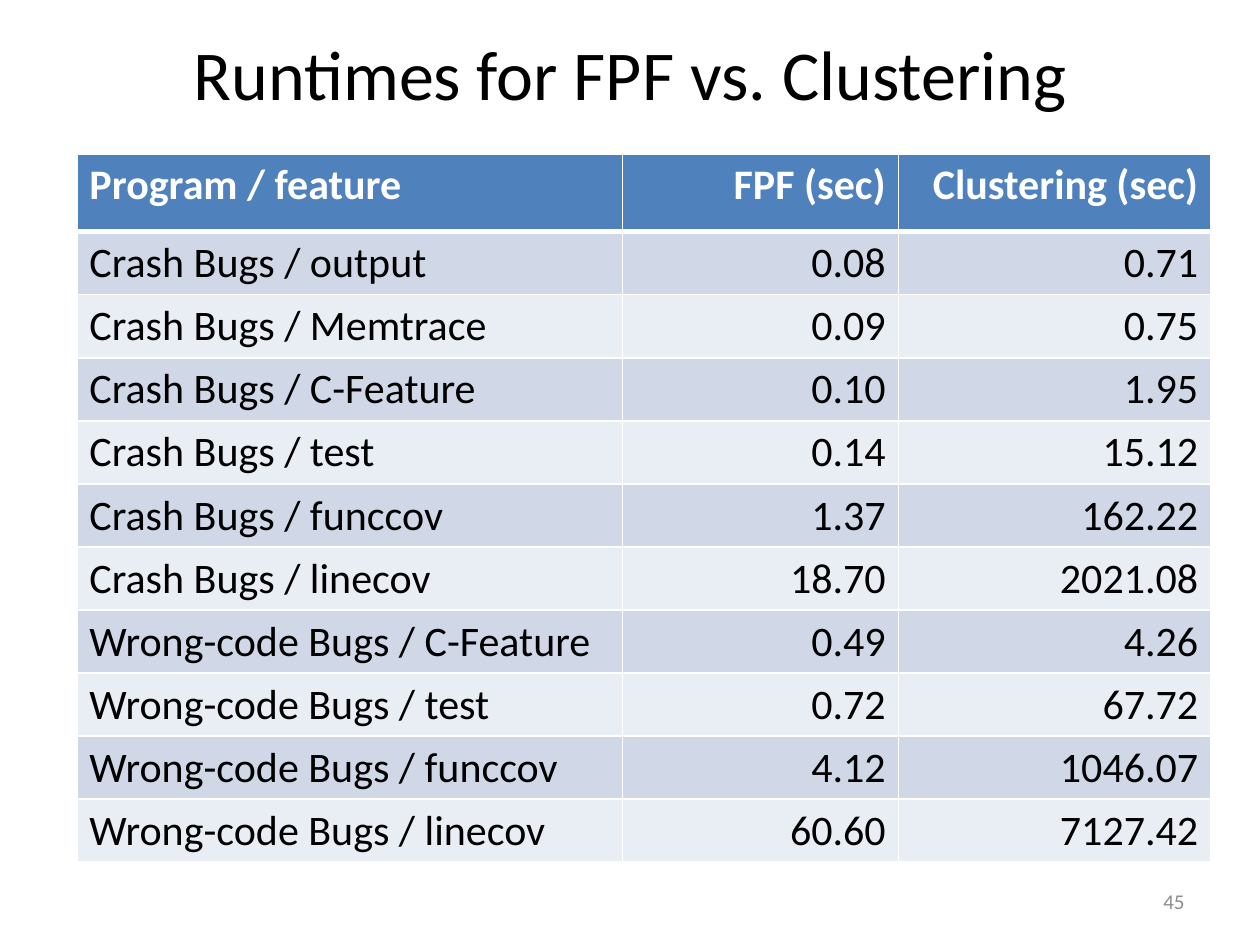
import pptx
import pptx.dml.color
import pptx.enum.text
import pptx.oxml.ns
import pptx.util
from lxml import etree

Cm = pptx.util.Cm
Pt = pptx.util.Pt
RGBColor = pptx.dml.color.RGBColor
Align = pptx.enum.text.PP_ALIGN
Anchor = pptx.enum.text.MSO_ANCHOR

BLACK = RGBColor(0x00, 0x00, 0x00)
WHITE = RGBColor(0xFF, 0xFF, 0xFF)
GRAY = RGBColor(0x8C, 0x8C, 0x8C)
HEADER_BLUE = RGBColor(0x4F, 0x81, 0xBD)
BANDS = (RGBColor(0xD0, 0xD8, 0xE8), RGBColor(0xE9, 0xED, 0xF4))

HEADINGS = ("Program / feature", "FPF (sec)", "Clustering (sec)")
RUNTIMES = {
    "Crash Bugs": (
        ("output", "0.08", "0.71"),
        ("Memtrace", "0.09", "0.75"),
        ("C-Feature", "0.10", "1.95"),
        ("test", "0.14", "15.12"),
        ("funccov", "1.37", "162.22"),
        ("linecov", "18.70", "2021.08"),
    ),
    "Wrong-code Bugs": (
        ("C-Feature", "0.49", "4.26"),
        ("test", "0.72", "67.72"),
        ("funccov", "4.12", "1046.07"),
        ("linecov", "60.60", "7127.42"),
    ),
}


def write_text(text_frame, text, alignment, size, color, bold=False):
    paragraph = text_frame.paragraphs[0]
    paragraph.alignment = alignment
    run = paragraph.add_run()
    run.text = text
    font_format = {"name": "Calibri", "size": Pt(size), "bold": bold}
    for name, value in font_format.items():
        setattr(run.font, name, value)
    run.font.color.rgb = color


def add_label(slide, box, text, alignment, size, color):
    text_frame = slide.shapes.add_textbox(*box).text_frame
    frame_format = {"word_wrap": True, "vertical_anchor": Anchor.MIDDLE}
    for name, value in frame_format.items():
        setattr(text_frame, name, value)
    write_text(text_frame, text, alignment, size, color)


def set_borders(cell, widths):
    qn = pptx.oxml.ns.qn
    properties = cell._tc.get_or_add_tcPr()
    for side, width in widths.items():
        line = etree.SubElement(properties, qn(f"a:ln{side}"), w=str(Pt(width)))
        fill = etree.SubElement(line, qn("a:solidFill"))
        etree.SubElement(fill, qn("a:srgbClr"), val=str(WHITE))


def add_runtime_table(slide, box):
    left, top, width, height = box
    rows = [HEADINGS] + [
        (f"{program} / {feature}", *seconds)
        for program, features in RUNTIMES.items()
        for feature, *seconds in features
    ]
    table = slide.shapes.add_table(
        len(rows), len(HEADINGS), left, top, width, height
    ).table
    first_width, second_width = Cm(11), Cm(5.56)
    column_widths = (first_width, second_width, width - first_width - second_width)
    for column, column_width in zip(table.columns, column_widths):
        column.width = column_width

    header_height = Cm(1.57)
    body_height = (height - header_height) // (len(rows) - 1)
    for row_index, values in enumerate(rows):
        is_header = row_index == 0
        table.rows[row_index].height = header_height if is_header else body_height
        background = HEADER_BLUE if is_header else BANDS[(row_index - 1) % 2]
        borders = {
            "L": 1,
            "R": 1,
            "T": 3 if row_index == 1 else 1,
            "B": 3 if is_header else 1,
        }
        for column_index, value in enumerate(values):
            cell = table.cell(row_index, column_index)
            set_borders(cell, borders)
            cell.fill.solid()
            cell.fill.fore_color.rgb = background
            write_text(
                cell.text_frame,
                value,
                Align.RIGHT if column_index else Align.LEFT,
                24,
                WHITE if is_header else BLACK,
                is_header,
            )


def build_runtime_slide(presentation):
    slide = presentation.slides.add_slide(presentation.slide_layouts[6])
    add_label(
        slide,
        (Cm(1.27), Cm(-0.13), Cm(22.86), Cm(3.18)),
        "Runtimes for FPF vs. Clustering",
        Align.CENTER,
        40,
        BLACK,
    )
    add_runtime_table(slide, (Cm(1.55), Cm(3.1), Cm(22.86), Cm(14.27)))
    add_label(
        slide,
        (Cm(18.2), Cm(17.65), Cm(5.93), Cm(1.02)),
        "45",
        Align.RIGHT,
        12,
        GRAY,
    )


def main():
    presentation = pptx.Presentation()
    slide_size = {"slide_width": Cm(25.4), "slide_height": Cm(19.05)}
    for name, value in slide_size.items():
        setattr(presentation, name, value)
    build_runtime_slide(presentation)
    presentation.save("out.pptx")


if __name__ == "__main__":
    main()
